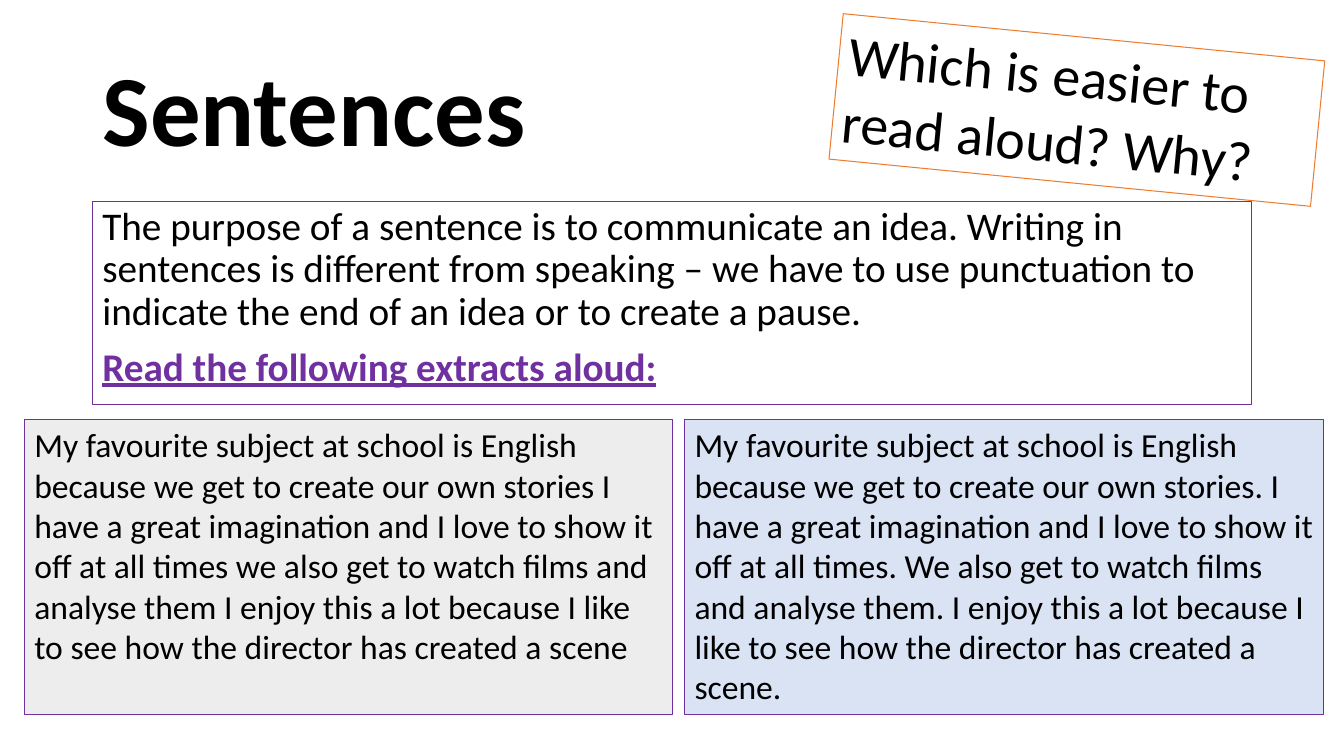
"""Build a slide that compares an unpunctuated extract with a punctuated one."""
from pptx import Presentation
from pptx.dml.color import RGBColor
from pptx.enum.text import MSO_ANCHOR as Anchor, MSO_AUTO_SIZE as AutoSize, PP_ALIGN as Align
from pptx.util import Inches, Pt

COLOURS = {
    "text": "000000",
    "purple": "7030A0",
    "orange": "ED7D31",
    "grey": "EDEDED",
    "blue": "DAE3F3",
}


class LessonSlide:
    FONT = "Calibri"
    COLUMNS, ROWS = 160, 90

    def __init__(self, presentation):
        self.column = presentation.slide_width / self.COLUMNS
        self.row = presentation.slide_height / self.ROWS
        self.slide = presentation.slides.add_slide(presentation.slide_layouts[5])

    def colour(self, name):
        return RGBColor.from_string(COLOURS[name])

    def place(self, left, top, width, height):
        return (round(left * self.column), round(top * self.row),
                round(width * self.column), round(height * self.row))

    def set_text(self, paragraph, text, size, colour="text", bold=False, underline=False):
        paragraph.text = text
        paragraph.alignment = Align.LEFT
        font = paragraph.font
        font.name, font.size = self.FONT, Pt(size)
        font.bold, font.underline = bold, underline
        font.color.rgb = self.colour(colour)

    def title(self, area, text, size):
        shape = self.slide.shapes.title
        shape.left, shape.top, shape.width, shape.height = self.place(*area)
        frame = shape.text_frame
        frame.auto_size = AutoSize.NONE
        frame.vertical_anchor = Anchor.MIDDLE
        paragraph = frame.paragraphs[0]
        self.set_text(paragraph, text, size, bold=True)
        paragraph.line_spacing = 0.9

    def box(self, area, text, size, line="purple", fill=None, rotation=0):
        shape = self.slide.shapes.add_textbox(*self.place(*area))
        shape.rotation = rotation
        shape.line.color.rgb = self.colour(line)
        shape.line.width = Pt(0.75)
        if fill:
            shape.fill.solid()
            shape.fill.fore_color.rgb = self.colour(fill)
        frame = shape.text_frame
        frame.word_wrap = True
        frame.auto_size = AutoSize.NONE
        self.set_text(frame.paragraphs[0], text, size)
        return frame

    def purpose(self, area, text, instruction, size):
        frame = self.box(area, text, size)
        self.set_text(frame.add_paragraph(), instruction, size, "purple", bold=True, underline=True)
        for paragraph in frame.paragraphs:
            paragraph.line_spacing = 0.9
            paragraph.space_before = Pt(10)


def main():
    presentation = Presentation()
    presentation.slide_width, presentation.slide_height = Inches(13.33), Inches(7.5)
    lesson = LessonSlide(presentation)
    lesson.title((11, 4.8, 138, 17.4), "Sentences", 72)
    lesson.purpose(
        (11, 24, 138, 24.2),
        "The purpose of a sentence is to communicate an idea. Writing in sentences is "
        "different from speaking – we have to use punctuation to indicate the end of "
        "an idea or to create a pause.",
        "Read the following extracts aloud:", 28)
    extracts = [
        (2.9, 77.2, "grey",
         "My favourite subject at school is English because we get to create our own "
         "stories I have a great imagination and I love to show it off at all times we "
         "also get to watch films and analyse them I enjoy this a lot because I like to "
         "see how the director has created a scene"),
        (81.5, 76.1, "blue",
         "My favourite subject at school is English because we get to create our own "
         "stories. I have a great imagination and I love to show it off at all times. We "
         "also get to watch films and analyse them. I enjoy this a lot because I like to "
         "see how the director has created a scene."),
    ]
    for left, width, fill, text in extracts:
        lesson.box((left, 49.9, width, 35.2), text, 24, fill=fill)
    lesson.box((99.4, 4.4, 57.6, 17.4), "Which is easier to read aloud? Why?", 40,
               line="orange", rotation=5.6)
    presentation.save("out.pptx")


if __name__ == "__main__":
    main()
